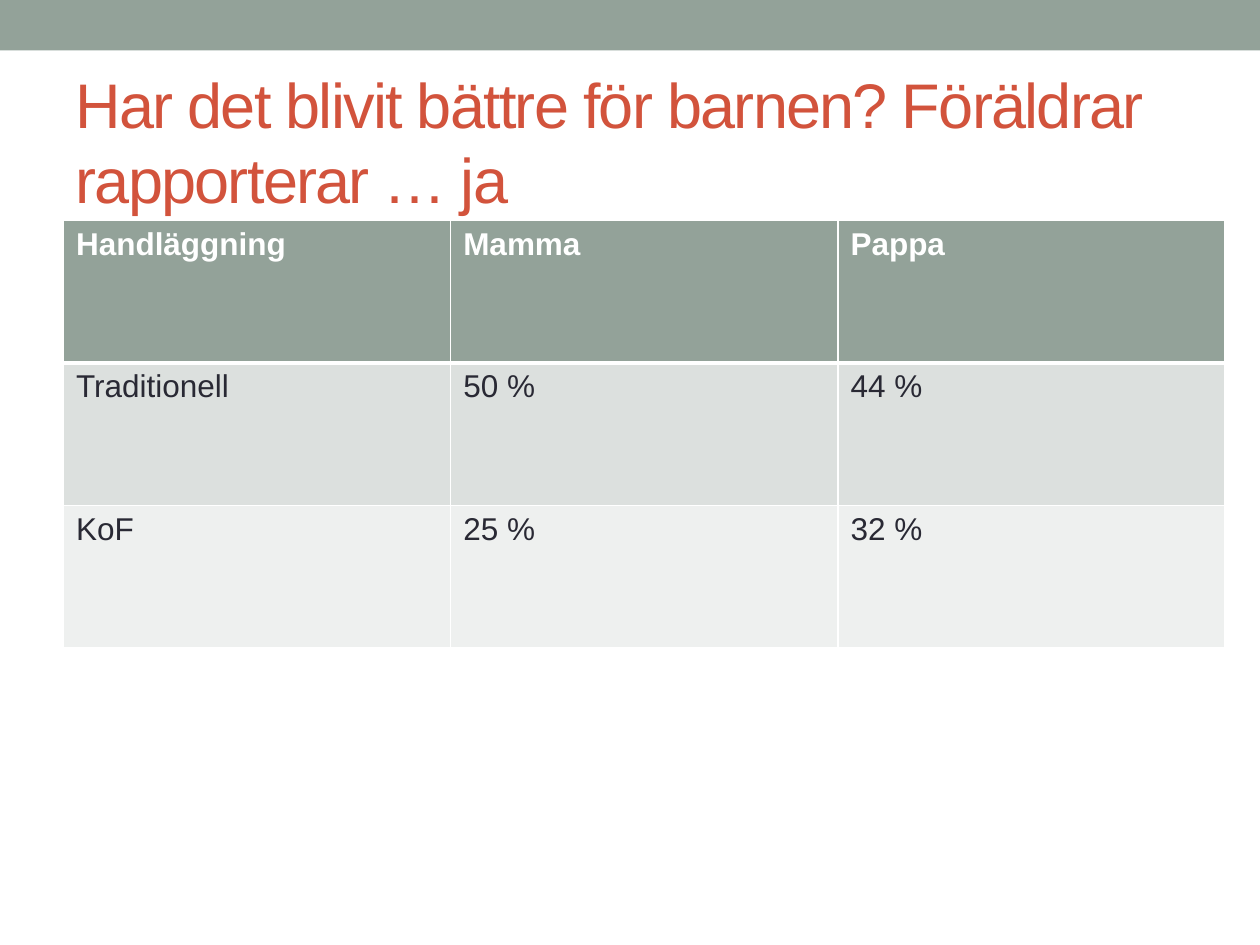
from dataclasses import dataclass

from lxml.etree import SubElement
from pptx import Presentation
from pptx.dml.color import RGBColor
from pptx.enum.shapes import MSO_SHAPE
from pptx.enum.text import MSO_ANCHOR, PP_ALIGN
from pptx.oxml.ns import qn
from pptx.util import Cm, Pt


@dataclass(frozen=True)
class Theme:
    font: str = "Arial"
    sage: str = "93A299"
    red: str = "D2533C"
    ink: str = "292934"
    white: str = "FFFFFF"
    bands: tuple = ("DCE0DE", "EEF0EF")
    head: int = 36
    body: int = 18


THEME = Theme()
ROWS = [
    ("Handläggning", "Mamma", "Pappa"),
    ("Traditionell", "50 %", "44 %"),
    ("KoF", "25 %", "32 %"),
]


def paint(fill, color):
    fill.solid()
    fill.fore_color.rgb = RGBColor.from_string(color)


def style(para, size, color, bold=False):
    font = para.font
    font.name, font.size, font.bold = THEME.font, Pt(size), bold
    font.color.rgb = RGBColor.from_string(color)


def add_bar(slide, width):
    bar = slide.shapes.add_shape(MSO_SHAPE.RECTANGLE, 0, 0, width, Cm(1.02))
    bar.shadow.inherit = False
    paint(bar.fill, THEME.sage)
    bar.line.fill.background()


def add_title(slide, text):
    title = slide.shapes.title
    title.left, title.top = Cm(1.27), Cm(1.47)
    title.width, title.height = Cm(22.86), Cm(2.74)
    frame = title.text_frame
    frame.text = text
    frame.word_wrap = True
    frame.vertical_anchor = MSO_ANCHOR.MIDDLE
    para = frame.paragraphs[0]
    para.alignment = PP_ALIGN.LEFT
    style(para, THEME.head, THEME.red)
    # Tighten the letters by one point
    para.runs[0].font._element.set("spc", "-100")


def add_edge(props, side, width):
    line = SubElement(props, qn(f"a:{side}"), w=str(Pt(width)))
    fill = SubElement(line, qn("a:solidFill"))
    SubElement(fill, qn("a:srgbClr"), val=THEME.white)


def fill_cell(cell, text, row):
    top = row == 0
    cell.text = text
    style(cell.text_frame.paragraphs[0], THEME.body,
          THEME.white if top else THEME.ink, top)
    # Borders come before the fill; the header has a thick lower edge
    props = cell._tc.get_or_add_tcPr()
    for side in ("lnL", "lnR", "lnT", "lnB"):
        thick = (side, row) in (("lnB", 0), ("lnT", 1))
        add_edge(props, side, 3 if thick else 1)
    paint(cell.fill, THEME.sage if top else THEME.bands[(row - 1) % 2])


def add_grid(slide, rows):
    grid = slide.shapes.add_table(len(rows), len(rows[0]), Cm(1.28), Cm(4.45),
                                  Cm(23.42), Cm(8.61)).table
    for row, texts in enumerate(rows):
        for col, text in enumerate(texts):
            fill_cell(grid.cell(row, col), text, row)


def main():
    deck = Presentation()
    deck.slide_width, deck.slide_height = Cm(25.4), Cm(19.05)
    slide = deck.slides.add_slide(deck.slide_layouts[5])
    paint(slide.background.fill, THEME.white)

    # Top band and heading
    add_bar(slide, deck.slide_width)
    add_title(slide, "Har det blivit bättre för barnen? Föräldrar rapporterar … ja")

    # Parents' answers
    add_grid(slide, ROWS)
    deck.save("out.pptx")


if __name__ == "__main__":
    main()
